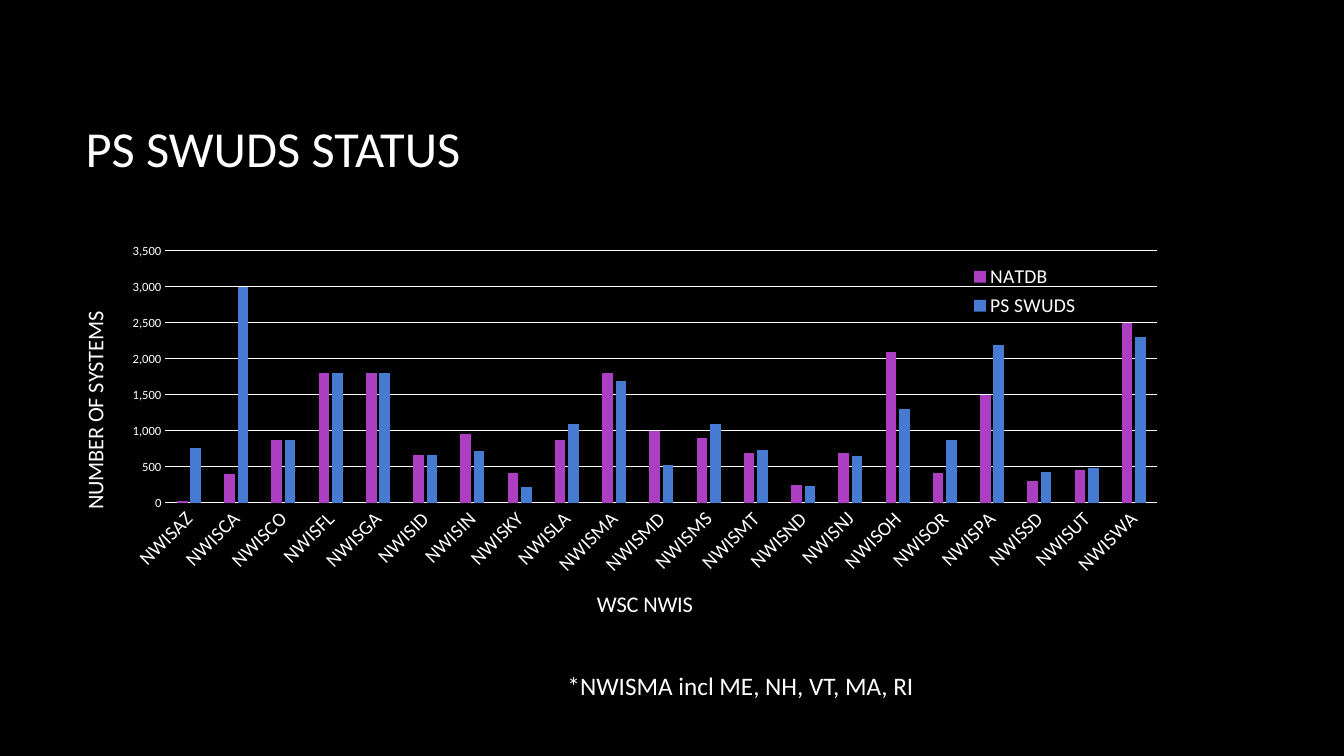
"""Build the PS SWUDS status slide with its clustered column chart."""
from dataclasses import dataclass

from lxml import etree
from pptx import Presentation
from pptx.chart.data import CategoryChartData
from pptx.dml.color import RGBColor
from pptx.enum.chart import XL_CHART_TYPE, XL_LEGEND_POSITION, XL_TICK_MARK
from pptx.enum.text import MSO_ANCHOR
from pptx.oxml.ns import qn
from pptx.util import Inches, Pt

BLACK = RGBColor(0x00, 0x00, 0x00)
WHITE = RGBColor(0xFF, 0xFF, 0xFF)
PURPLE = RGBColor(0xAC, 0x3E, 0xC1)
BLUE = RGBColor(0x47, 0x7B, 0xD1)
FONT = "Calibri"
COLUMNS = XL_CHART_TYPE.COLUMN_CLUSTERED
LEGEND_RIGHT = XL_LEGEND_POSITION.RIGHT
NO_TICK = XL_TICK_MARK.NONE
MIDDLE = MSO_ANCHOR.MIDDLE
TOP = MSO_ANCHOR.TOP

CHART_WIDTH, CHART_HEIGHT = 11.08, 3.99
STATES = "AZ CA CO FL GA ID IN KY LA MA MD MS MT ND NJ OH OR PA SD UT WA".split()


@dataclass
class Label:
    text: str
    left: float
    top: float
    width: float
    height: float
    size: int
    anchor: MSO_ANCHOR


@dataclass
class Systems:
    name: str
    color: RGBColor
    values: list[int]


LABELS = [
    Label("PS SWUDS STATUS", 0.75, 0.67, 11.08, 1.59, 36, MIDDLE),
    Label("*NWISMA incl ME, NH, VT, MA, RI", 5.53, 6.6, 6.08, 0.4, 18, TOP),
]
SYSTEMS = [
    Systems("NATDB", PURPLE, [
        30, 400, 870, 1800, 1800, 670, 960, 420, 880, 1800, 1000,
        900, 690, 250, 690, 2100, 420, 1500, 300, 460, 2500]),
    Systems("PS SWUDS", BLUE, [
        760, 3000, 870, 1800, 1800, 670, 720, 220, 1100, 1700, 520,
        1100, 730, 240, 650, 1300, 880, 2200, 430, 480, 2300]),
]


def style_font(font, size: int) -> None:
    font.name = FONT
    font.size = Pt(size)
    font.bold = False
    font.color.rgb = WHITE


def add_label(slide, label: Label) -> None:
    sp = slide.shapes.add_textbox(Inches(label.left), Inches(label.top),
                                  Inches(label.width), Inches(label.height))
    tf = sp.text_frame
    tf.word_wrap = True
    tf.vertical_anchor = label.anchor
    r = tf.paragraphs[0].add_run()
    r.text = label.text
    style_font(r.font, label.size)


def place(element, index: int, inner: bool = False, **inches: float) -> None:
    for old in element.findall(qn("c:layout")):
        element.remove(old)
    layout = etree.Element(qn("c:layout"))
    manual = etree.SubElement(layout, qn("c:manualLayout"))
    if inner:
        etree.SubElement(manual, qn("c:layoutTarget"), val="inner")
    for mode in ("xMode", "yMode"):
        etree.SubElement(manual, qn(f"c:{mode}"), val="edge")
    for name, value in inches.items():
        whole = CHART_WIDTH if name in "xw" else CHART_HEIGHT
        etree.SubElement(manual, qn(f"c:{name}"), val=str(value / whole))
    element.insert(index, layout)


def rotate(element, degrees: int) -> None:
    body = element.find(".//" + qn("a:bodyPr"))
    body.set("rot", str(degrees * 60000))
    body.set("vert", "horz")


def style_axis(axis, title: str, size: int, x: float, y: float, turn: int) -> None:
    axis.major_tick_mark = NO_TICK
    axis.minor_tick_mark = NO_TICK
    style_font(axis.tick_labels.font, size)
    r = axis.axis_title.text_frame.paragraphs[0].add_run()
    r.text = title
    style_font(r.font, 16)
    rotate(axis.axis_title.element, turn)
    place(axis.axis_title.element, 1, x=x, y=y)


def add_systems_chart(slide) -> None:
    data = CategoryChartData(number_format="#,##0")
    data.categories = [f"NWIS{state}" for state in STATES]
    for systems in SYSTEMS:
        data.add_series(systems.name, systems.values)
    chart = slide.shapes.add_chart(COLUMNS, Inches(0.75), Inches(2.34),
                                   Inches(CHART_WIDTH), Inches(CHART_HEIGHT),
                                   data).chart
    style_font(chart.font, 10)
    chart.has_title = False
    place(chart.element.find(".//" + qn("c:plotArea")), 0, inner=True,
          x=0.89, y=0.15, w=9.84, h=2.5)

    plot = chart.plots[0]
    plot.gap_width = 219
    plot.overlap = -27
    plot.vary_by_categories = False
    for series, systems in zip(plot.series, SYSTEMS):
        series.invert_if_negative = False
        series.format.fill.solid()
        series.format.fill.fore_color.rgb = systems.color

    cat, val = chart.category_axis, chart.value_axis
    style_axis(cat, "WSC NWIS", 14, 5.13, 3.46, 0)
    rotate(chart.element.find(".//" + qn("c:catAx")).find(qn("c:txPr")), -45)
    style_axis(val, "NUMBER OF SYSTEMS", 9, 0, 0.71, -90)
    val.minimum_scale, val.maximum_scale, val.major_unit = 0, 3500, 500
    val.tick_labels.number_format = "#,##0"
    val.tick_labels.number_format_is_linked = False
    val.format.line.fill.background()
    for line in (cat.format.line, val.major_gridlines.format.line):
        line.color.rgb = WHITE
        line.width = Pt(0.75)

    chart.has_legend = True
    chart.legend.position = LEGEND_RIGHT
    chart.legend.include_in_layout = False
    style_font(chart.legend.font, 14)
    place(chart.element.find(".//" + qn("c:legend")), 1,
          x=8.75, y=0.24, w=1.33, h=0.62)


def main() -> None:
    prs = Presentation()
    prs.slide_width, prs.slide_height = Inches(13.33), Inches(7.5)
    slide = prs.slides.add_slide(prs.slide_layouts[6])
    slide.background.fill.solid()
    slide.background.fill.fore_color.rgb = BLACK
    add_systems_chart(slide)
    for label in LABELS:
        add_label(slide, label)
    prs.save("out.pptx")


if __name__ == "__main__":
    main()
